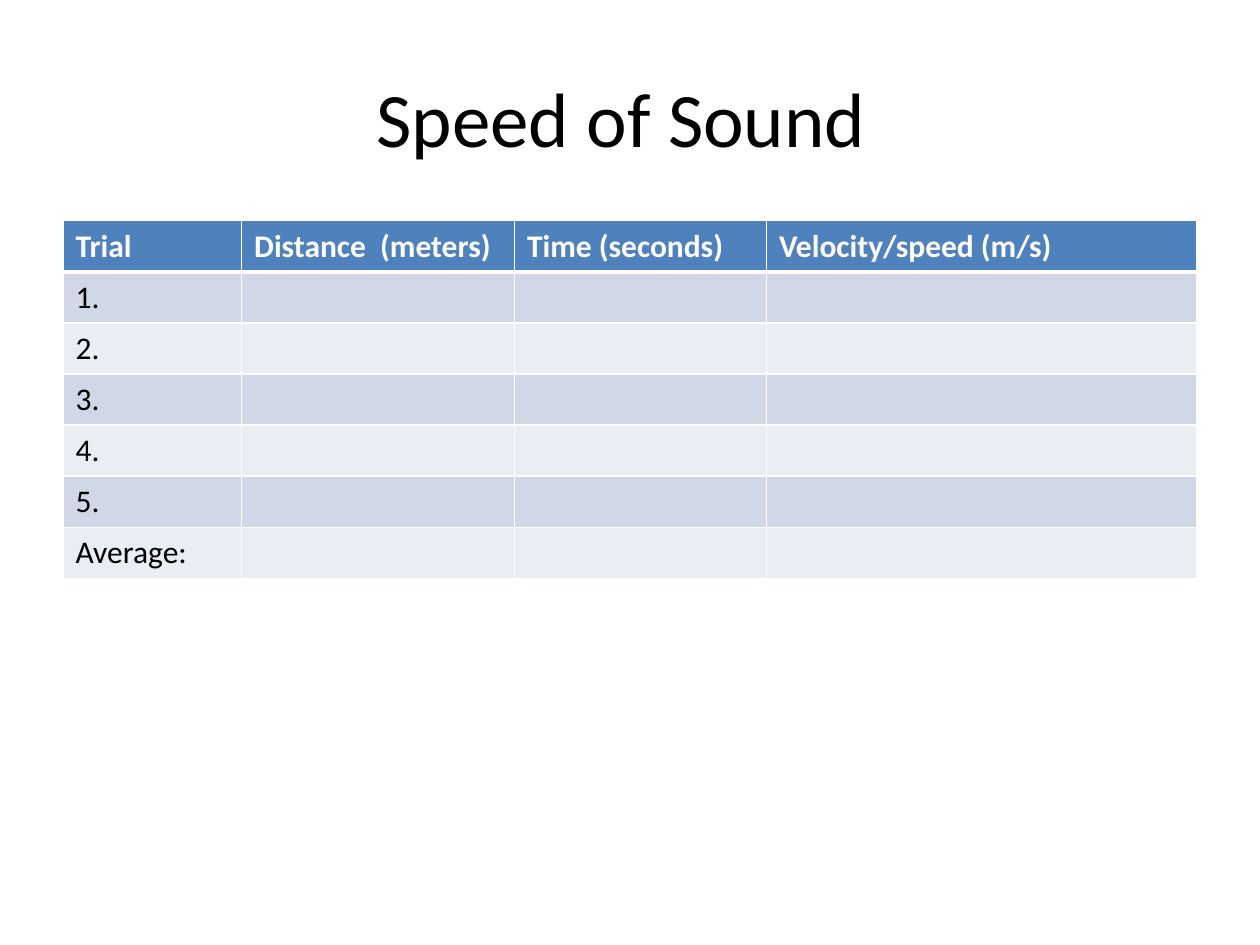
import lxml.etree
import pptx
import pptx.dml.color
import pptx.enum.text
import pptx.oxml.ns
import pptx.util

Cm = pptx.util.Cm
Pt = pptx.util.Pt

TITLE = "Speed of Sound "
HEADERS = ["Trial", "Distance  (meters)", "Time (seconds)", "Velocity/speed (m/s)"]
TRIALS = ["1.", "2.", "3.", "4.", "5.", "Average:"]
COLUMN_WIDTHS = [3.6, 5.5, 5.08, 8.68]
ROW_HEIGHT = 1.03
LEFT, TABLE_TOP = 1.27, 4.45

THEME = {
    "font": "Calibri",
    "title_size": 44,
    "table_size": 18,
    "text": "000000",
    "header_text": "FFFFFF",
    "header_fill": "4F81BD",
    "bands": ["D0D8E8", "E9EDF4"],
    "border": "FFFFFF",
    "thin": 1,
    "thick": 3,
}


def color(name):
    return pptx.dml.color.RGBColor.from_string(name)


def format_text(text_frame, size, text_color, bold=False):
    for paragraph in text_frame.paragraphs:
        for font in [paragraph.font] + [run.font for run in paragraph.runs]:
            font.name = THEME["font"]
            font.size = Pt(size)
            font.bold = bold
            font.color.rgb = color(text_color)


def add_borders(cell, widths):
    properties = cell._tc.get_or_add_tcPr()
    qualified = pptx.oxml.ns.qn
    for side, width in widths.items():
        line = lxml.etree.SubElement(properties, qualified(f"a:ln{side}"), w=str(Pt(width)))
        fill = lxml.etree.SubElement(line, qualified("a:solidFill"))
        lxml.etree.SubElement(fill, qualified("a:srgbClr"), val=THEME["border"])


def add_title(slide):
    title = slide.shapes.title
    title.left, title.top, title.width, title.height = Cm(LEFT), Cm(0.76), Cm(22.86), Cm(3.18)
    title.text_frame.text = TITLE
    title.text_frame.vertical_anchor = pptx.enum.text.MSO_ANCHOR.MIDDLE
    title.text_frame.paragraphs[0].alignment = pptx.enum.text.PP_ALIGN.CENTER
    format_text(title.text_frame, THEME["title_size"], THEME["text"])


def add_trial_table(slide):
    blanks = [""] * (len(HEADERS) - 1)
    rows = [HEADERS] + [[trial] + blanks for trial in TRIALS]
    table = slide.shapes.add_table(
        len(rows), len(HEADERS), Cm(LEFT), Cm(TABLE_TOP),
        Cm(sum(COLUMN_WIDTHS)), Cm(ROW_HEIGHT * len(rows)),
    ).table
    for column, width in zip(table.columns, COLUMN_WIDTHS):
        column.width = Cm(width)
    for row_index, row in enumerate(rows):
        table.rows[row_index].height = Cm(ROW_HEIGHT)
        is_header = row_index == 0
        fill = THEME["header_fill"] if is_header else THEME["bands"][(row_index - 1) % 2]
        text_color = THEME["header_text"] if is_header else THEME["text"]
        borders = dict.fromkeys("LRTB", THEME["thin"])
        if is_header:
            borders["B"] = THEME["thick"]
        elif row_index == 1:
            borders["T"] = THEME["thick"]
        for column_index, text in enumerate(row):
            cell = table.cell(row_index, column_index)
            cell.text_frame.text = text
            format_text(cell.text_frame, THEME["table_size"], text_color, is_header)
            add_borders(cell, borders)
            cell.fill.solid()
            cell.fill.fore_color.rgb = color(fill)


def main():
    presentation = pptx.Presentation()
    presentation.slide_width, presentation.slide_height = Cm(25.4), Cm(19.05)
    slide = presentation.slides.add_slide(presentation.slide_layouts[5])
    add_title(slide)
    add_trial_table(slide)
    presentation.save("out.pptx")


if __name__ == "__main__":
    main()
